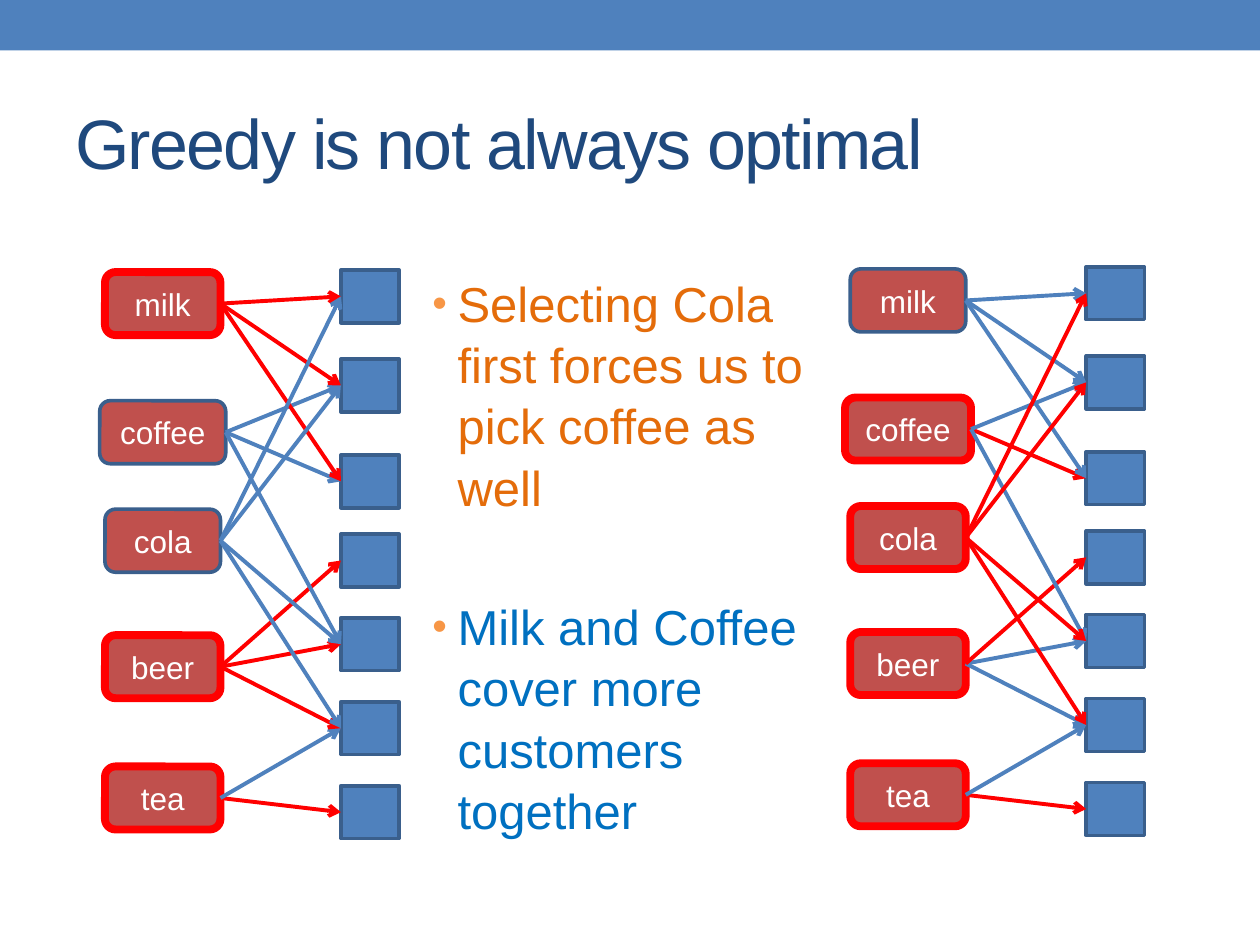
from lxml import etree
from pptx import Presentation
from pptx.dml.color import RGBColor
from pptx.enum.shapes import MSO_CONNECTOR, MSO_SHAPE
from pptx.enum.text import MSO_ANCHOR, PP_ALIGN
from pptx.oxml.ns import qn
from pptx.util import Pt

RECT, ROUNDED = MSO_SHAPE.RECTANGLE, MSO_SHAPE.ROUNDED_RECTANGLE
STRAIGHT = MSO_CONNECTOR.STRAIGHT
MIDDLE, CENTER = MSO_ANCHOR.MIDDLE, PP_ALIGN.CENTER

BLUE = RGBColor(0x4F, 0x81, 0xBD)
OUTLINE = RGBColor(0x3A, 0x5F, 0x8C)
BRICK = RGBColor(0xC0, 0x50, 0x4D)
RED = RGBColor(0xFF, 0x00, 0x00)
NAVY = RGBColor(0x1F, 0x49, 0x7D)
ORANGE = RGBColor(0xE4, 0x6C, 0x0A)
SKY = RGBColor(0x00, 0x70, 0xC0)
WHITE = RGBColor(0xFF, 0xFF, 0xFF)
BULLET = "F79646"
FONT = "Arial"

# Content
TITLE = "Greedy is not always optimal"
POINTS = [  # text, colour, space before
    ("Selecting Cola first forces us to pick coffee as well", ORANGE, 0),
    ("Milk and Coffee cover more customers together", SKY, 44.8),
]
# Drink: top, width, customers it covers
DRINKS = {
    "tea": (438, 66, [6, 5]),
    "beer": (363, 66, [4, 5, 3]),
    "coffee": (229, 72, [2, 4, 1]),
    "milk": (155.5, 66, [0, 1, 2]),
    "cola": (291, 66, [0, 1, 5, 4]),
}
CUSTOMER_TOPS = [154.3, 205.2, 260, 305.2, 353, 401, 449]
# Shift right, shift down, drinks in the order they are picked
GRAPHS = [
    (425.9, -1.8, ["cola", "coffee", "beer", "tea"]),
    (0, 0, ["beer", "milk", "tea"]),
]
DRINK_CENTER, DRINK_HEIGHT = 93, 36
CUSTOMER_LEFT, CUSTOMER_WIDTH, CUSTOMER_HEIGHT = 194.8, 33.3, 30.2


def add_block(page, kind, left, top, width, height, fill, line=None, weight=2.08):
    block = page.shapes.add_shape(kind, Pt(left), Pt(top), Pt(width), Pt(height))
    block.shadow.inherit = False
    block.fill.solid()
    block.fill.fore_color.rgb = fill
    if line is None:
        block.line.fill.background()
    else:
        block.line.color.rgb = line
        block.line.width = Pt(weight)
    return block


def add_textbox(page, left, top, width, height):
    frame = page.shapes.add_textbox(Pt(left), Pt(top), Pt(width), Pt(height)).text_frame
    frame.word_wrap = True
    return frame


def write(paragraph, text, size, color):
    paragraph.text = text
    paragraph.font.name = FONT
    paragraph.font.size = Pt(size)
    paragraph.font.color.rgb = color


def add_bullet(paragraph):
    props = paragraph._p.get_or_add_pPr()
    props.set("marL", str(Pt(14.4)))
    props.set("indent", str(Pt(-14.4)))
    # Keep the bullet marks ahead of the default run properties
    color = etree.Element(qn("a:buClr"))
    etree.SubElement(color, qn("a:srgbClr"), val=BULLET)
    marks = [
        color,
        etree.Element(qn("a:buSzPct"), val="85000"),
        etree.Element(qn("a:buFont"), typeface=FONT),
        etree.Element(qn("a:buChar"), char="•"),
    ]
    defaults = props.find(qn("a:defRPr"))
    for mark in marks:
        defaults.addprevious(mark)


def add_arrow(page, start, end, color):
    arrow = page.shapes.add_connector(STRAIGHT, *(Pt(value) for value in start + end))
    arrow.line.color.rgb = color
    arrow.line.width = Pt(2.25)
    etree.SubElement(arrow.line._get_or_add_ln(), qn("a:tailEnd"), type="arrow")
    etree.SubElement(arrow._element.spPr, qn("a:effectLst"))


def newly_covered(picks):
    """Pairs of drink and customer where the drink reaches the customer first."""
    first = {}
    for drink in picks:
        for customer in DRINKS[drink][2]:
            first.setdefault(customer, drink)
    return {(drink, customer) for customer, drink in first.items()}


def add_graph(page, shift_x, shift_y, picks):
    left = CUSTOMER_LEFT + shift_x
    tops = [top + shift_y for top in CUSTOMER_TOPS]
    center = DRINK_CENTER + shift_x
    for top in tops:
        add_block(page, RECT, left, top, CUSTOMER_WIDTH, CUSTOMER_HEIGHT, BLUE, OUTLINE)
    for drink, (top, width, _) in DRINKS.items():
        style = (RED, 4.5) if drink in picks else (OUTLINE, 2.08)
        block = add_block(page, ROUNDED, center - width / 2, top + shift_y,
                          width, DRINK_HEIGHT, BRICK, *style)
        frame = block.text_frame
        frame.word_wrap = False
        frame.vertical_anchor = MIDDLE
        write(frame.paragraphs[0], drink, 18, WHITE)
        frame.paragraphs[0].alignment = CENTER
    covered = newly_covered(picks)
    for drink, (top, width, customers) in DRINKS.items():
        start = (center + width / 2, top + shift_y + DRINK_HEIGHT / 2)
        for customer in customers:
            end = (left, tops[customer] + CUSTOMER_HEIGHT / 2)
            add_arrow(page, start, end, RED if (drink, customer) in covered else BLUE)


def main():
    deck = Presentation()
    deck.slide_width, deck.slide_height = Pt(720), Pt(540)
    page = deck.slides.add_slide(deck.slide_layouts[6])

    # Top band and title
    add_block(page, RECT, 0, 0, 720, 28.8, BLUE)
    frame = add_textbox(page, 36, 42, 648, 78)
    frame.vertical_anchor = MIDDLE
    write(frame.paragraphs[0], TITLE, 40, NAVY)
    frame.paragraphs[0].runs[0].font._element.set("spc", "-100")

    # Bulleted points
    frame = add_textbox(page, 240, 151.5, 228, 464.4 - 151.5)
    for index, (text, color, gap) in enumerate(POINTS):
        paragraph = frame.add_paragraph() if index else frame.paragraphs[0]
        write(paragraph, text, 28, color)
        paragraph.line_spacing = 1.04
        paragraph.space_before = Pt(gap)
        add_bullet(paragraph)

    # Drinks and customers
    for graph in GRAPHS:
        add_graph(page, *graph)

    deck.save("out.pptx")


if __name__ == "__main__":
    main()
